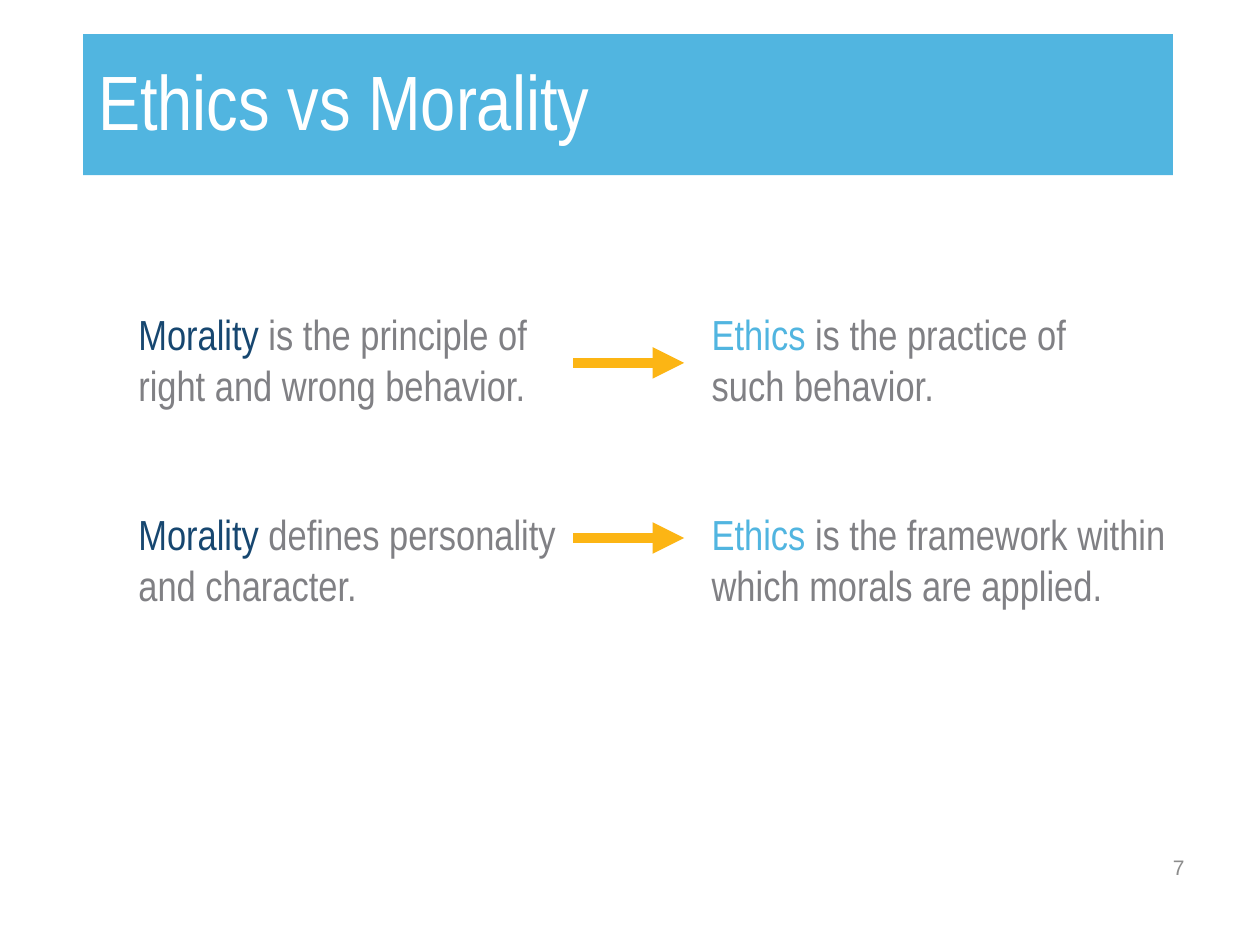
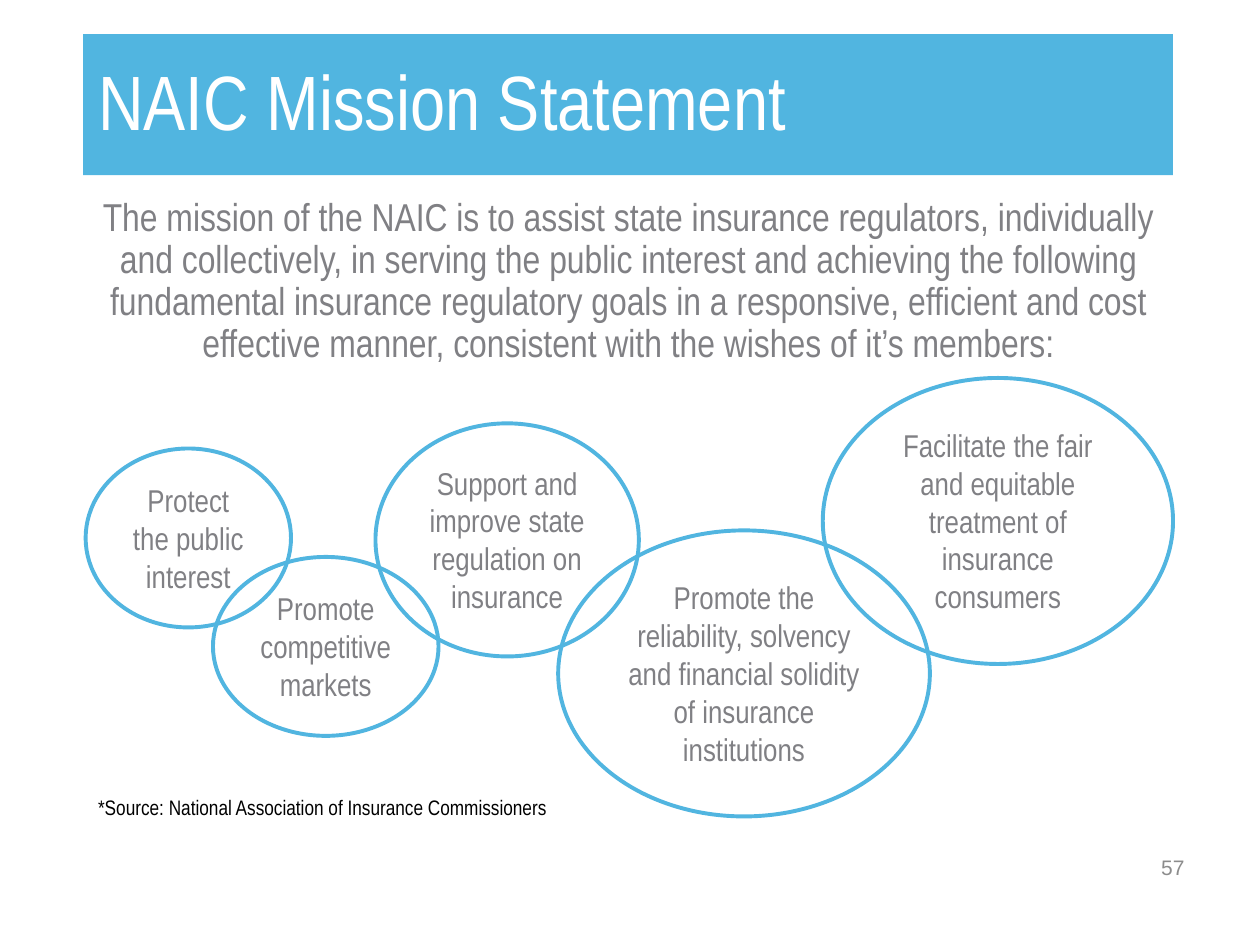
import pptx
import pptx.util
import pptx.dml.color
import pptx.enum.shapes
import pptx.enum.text
import pptx.oxml.ns
import lxml.etree


class Theme:
    sky, navy, gold = "51B5E0", "174770", "FCB514"
    gray, pale, white, black = "808084", "8C8C8C", "FFFFFF", "000000"
    font, plain = "Arial Narrow", "Arial"
    title, lead, body, goal, small = 44, 22.2, 24, 18, 12
    ring, arrow = 2.25, 6


WIDE, HIGH = 10, 7.5
COLS = 100
CELL = pptx.util.Inches(WIDE) / COLS

BAND = (6.6, 2.7, 86.5, 11.2)
TITLE = (6.8, 1.6, 86.2, 13.6)
NUMBER = (71.7, 66.8, 23.3, 4)
LEAD = (6.8, 15.2, 86.2, 14.8)
SOURCE = (6.8, 62.6, 59.9, 3)

PAIRS = {
    "title": "Ethics vs Morality",
    "number": "7",
    "terms": (("Morality", Theme.navy), ("Ethics", Theme.sky)),
    "rows": (
        (24, 28.8, (" is the principle of right and wrong behavior.",
                    " is the practice of such behavior."), (38.7, 33.1)),
        (39.9, 42.7, (" defines personality and character.",
                      " is the framework within which morals are applied."), (38.7, 38.7)),
    ),
    "lefts": (10, 55.5),
    "arrow": (45.5, 54.3),
    "height": 9.1,
}

MISSION = {
    "title": "NAIC Mission Statement",
    "number": "57",
    "lead": "The mission of the NAIC is to assist state insurance regulators, "
            "individually and collectively, in serving the public interest and "
            "achieving the following fundamental insurance regulatory goals in a "
            "responsive, efficient and cost effective manner, consistent with the "
            "wishes of it’s members:",
    "goals": (
        ("Promote the reliability, solvency and financial solidity of insurance institutions",
         (44.3, 42.1, 29.5, 22.7), Theme.white),
        ("Protect the public interest", (6.8, 35.6, 16.3, 14.2), None),
        ("Promote competitive markets", (16.9, 44.2, 17.9, 14.2), None),
        ("Facilitate the fair and equitable treatment of insurance consumers",
         (65.3, 30, 27.8, 22.7), None),
        ("Support and improve state regulation on insurance",
         (29.8, 33.6, 20.9, 18.5), None),
    ),
    "source": "*Source: National Association of Insurance Commissioners",
}

ALIGN = pptx.enum.text.PP_ALIGN
ANCHOR = pptx.enum.text.MSO_ANCHOR
SHAPE = pptx.enum.shapes.MSO_SHAPE


def place(box):
    return [round(side * CELL) for side in box]


def color(code):
    return pptx.dml.color.RGBColor.from_string(code)


def write(shape, runs, size, align=ALIGN.LEFT, anchor=ANCHOR.TOP, space=None, font=Theme.font):
    frame = shape.text_frame
    frame.word_wrap = True
    frame.auto_size = pptx.enum.text.MSO_AUTO_SIZE.NONE
    frame.vertical_anchor = anchor
    para = frame.paragraphs[0]
    para.alignment = align
    para.line_spacing = space
    for text, code in runs:
        run = para.add_run()
        run.text = text
        run.font.name = font
        run.font.size = pptx.util.Pt(size)
        run.font.color.rgb = color(code)


def add_text(slide, box, runs, size, **style):
    write(slide.shapes.add_textbox(*place(box)), runs, size, **style)


def add_form(slide, kind, box, fill=None, line=None):
    shape = slide.shapes.add_shape(kind, *place(box))
    shape.shadow.inherit = False
    if fill:
        shape.fill.solid()
        shape.fill.fore_color.rgb = color(fill)
    else:
        shape.fill.background()
    if line:
        shape.line.color.rgb = color(line)
        shape.line.width = pptx.util.Pt(Theme.ring)
    else:
        shape.line.fill.background()
    return shape


def add_arrow(slide, start, end, row):
    left, top, right, base = place((start, row, end, row))
    arrow = slide.shapes.add_connector(
        pptx.enum.shapes.MSO_CONNECTOR.STRAIGHT, left, top, right, base)
    arrow.line.color.rgb = color(Theme.gold)
    arrow.line.width = pptx.util.Pt(Theme.arrow)
    tail = lxml.etree.SubElement(arrow.line._get_or_add_ln(), pptx.oxml.ns.qn("a:tailEnd"))
    tail.set("type", "triangle")
    lxml.etree.SubElement(arrow._element.spPr, pptx.oxml.ns.qn("a:effectLst"))


def add_slide(deck, data):
    slide = deck.slides.add_slide(deck.slide_layouts[5])
    band = add_form(slide, SHAPE.RECTANGLE, BAND, Theme.sky)
    title = slide.shapes.title
    title._element.addprevious(band._element)
    title.left, title.top, title.width, title.height = place(TITLE)
    write(title, [(data["title"], Theme.white)], Theme.title,
          anchor=ANCHOR.MIDDLE, space=0.9)
    add_text(slide, NUMBER, [(data["number"], Theme.pale)], Theme.small,
             align=ALIGN.RIGHT, anchor=ANCHOR.MIDDLE, font=Theme.plain)
    return slide


def add_pairs(deck, data):
    slide = add_slide(deck, data)
    for top, mid, texts, widths in data["rows"]:
        for left, term, text, width in zip(data["lefts"], data["terms"], texts, widths):
            add_text(slide, (left, top, width, data["height"]),
                     [term, (text, Theme.gray)], Theme.body)
        add_arrow(slide, *data["arrow"], mid)


def add_goals(deck, data):
    slide = add_slide(deck, data)
    add_text(slide, LEAD, [(data["lead"], Theme.gray)], Theme.lead,
             align=ALIGN.CENTER, space=0.9)
    add_text(slide, SOURCE, [(data["source"], Theme.black)], Theme.small)
    for text, box, fill in data["goals"]:
        ring = add_form(slide, SHAPE.OVAL, box, fill, Theme.sky)
        write(ring, [(text, Theme.gray)], Theme.goal, align=ALIGN.CENTER)


def main():
    deck = pptx.Presentation()
    deck.slide_width = pptx.util.Inches(WIDE)
    deck.slide_height = pptx.util.Inches(HIGH)
    add_pairs(deck, PAIRS)
    add_goals(deck, MISSION)
    deck.save("out.pptx")


if __name__ == "__main__":
    main()
